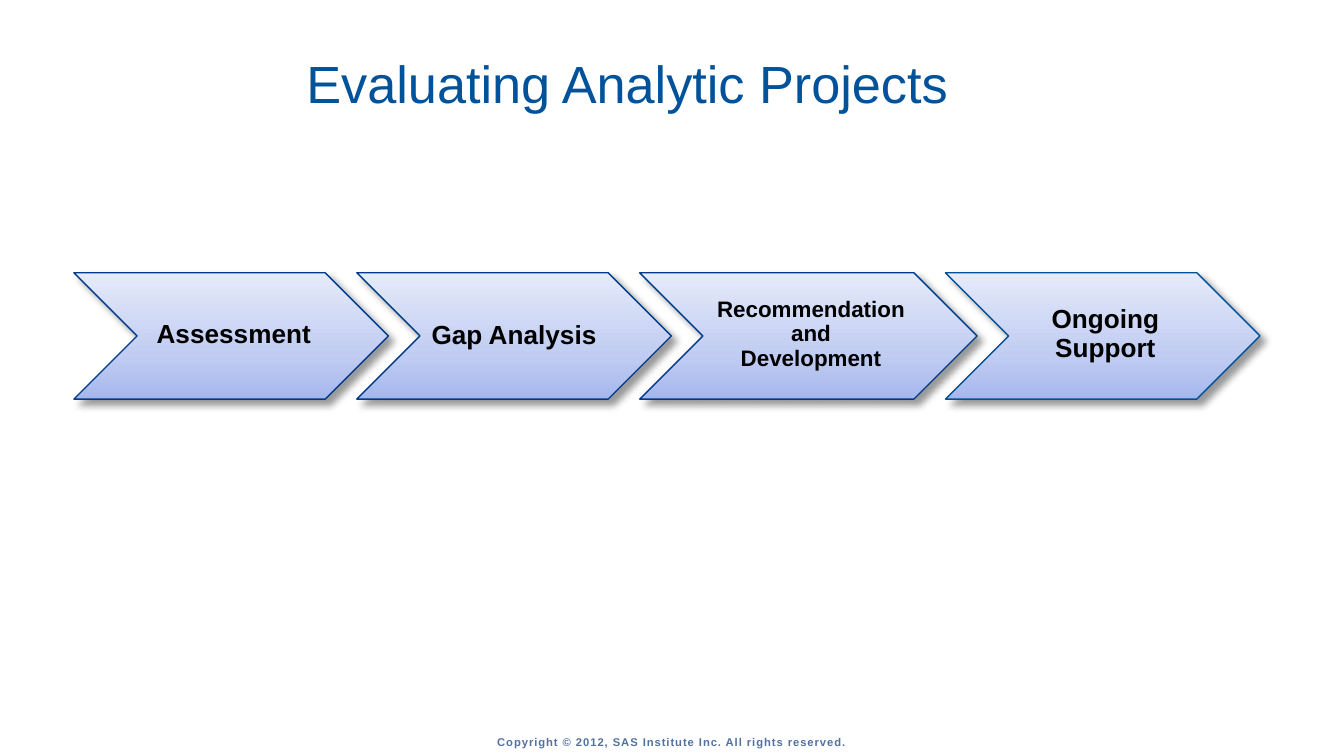
import copy

import pptx
import pptx.dml.color
import pptx.enum.shapes
import pptx.enum.text
import pptx.oxml
import pptx.oxml.ns
import pptx.util

Inches = pptx.util.Inches
Pt = pptx.util.Pt
ALIGN = pptx.enum.text.PP_ALIGN

# Content: label lines, chevron width, type size, line colour, label insets
TITLE = "Evaluating Analytic Projects"
COPYRIGHT = "Copyright © 2012, SAS Institute Inc. All rights reserved."
PLAIN = (0, 0, 0, 0)
INSET = (0.06, 0, 0.02, 0.02)
STEPS = [
    (["Assessment"], 2.34, "step", "line", INSET),
    (["Gap Analysis"], 2.34, "step", "line", PLAIN),
    (["Recommendation", "and", "Development"], 2.51, "long_step", "line", INSET),
    (["Ongoing Support"], 2.34, "step", "last_line", INSET),
]

THEME = {
    "font": "Arial",
    "color": {"title": "00539B", "text": "000000", "footer": "52719E",
              "line": "003A8A", "last_line": "005198"},
    "size": {"title": 28, "step": 14, "long_step": 12, "footer": 6},
    "gradient": [(0, "A5B7ED"), (0.35, "C0CCF1"), (1, "E6EBFA")],
}

LEFT, TOP, HEIGHT = 0.55, 2.03, 0.94
POINT = HEIGHT / 2  # depth of a chevron's notch and tip
OVERLAP = POINT / 2  # each tip reaches halfway into the next notch

SHADOW = (
    f'<a:effectLst {pptx.oxml.ns.nsdecls("a")}>'
    '<a:outerShdw blurRad="50800" dist="50800" dir="2700000" algn="tl" rotWithShape="0">'
    '<a:srgbClr val="000000"><a:alpha val="40000"/></a:srgbClr>'
    '</a:outerShdw></a:effectLst>'
)


def rgb(name):
    return pptx.dml.color.RGBColor.from_string(THEME["color"].get(name, name))


def write(box, lines, size, color, align, bold=False, insets=(0.1, 0.05, 0.1, 0.05)):
    """Fill a box with one paragraph, broken into the given lines."""
    frame = box.text_frame
    frame.word_wrap = True
    frame.auto_size = pptx.enum.text.MSO_AUTO_SIZE.NONE
    frame.vertical_anchor = pptx.enum.text.MSO_ANCHOR.MIDDLE
    (frame.margin_left, frame.margin_top,
     frame.margin_right, frame.margin_bottom) = map(Inches, insets)
    para = frame.paragraphs[0]
    para.alignment = align
    for index, line in enumerate(lines):
        if index:
            para.add_line_break()
        span = para.add_run()
        span.text = line
        span.font.name = THEME["font"]
        span.font.size = Pt(THEME["size"][size])
        span.font.bold = bold
        span.font.color.rgb = rgb(color)
    return para


def add_chevron(group, left, width, line):
    chevron = group.shapes.add_shape(
        pptx.enum.shapes.MSO_SHAPE.CHEVRON,
        Inches(left), Inches(TOP), Inches(width), Inches(HEIGHT))
    chevron.adjustments[0] = 0.5
    chevron.line.color.rgb = rgb(line)
    chevron.line.width = Pt(0.75)

    # Three-stop gradient, palest at the top
    fill = chevron.fill
    fill.gradient()
    fill.gradient_angle = 90
    stops = chevron.element.spPr.find(".//" + pptx.oxml.ns.qn("a:gsLst"))
    stops.append(copy.deepcopy(stops[0]))
    for stop, (position, color) in zip(fill.gradient_stops, THEME["gradient"]):
        stop.position = position
        stop.color.rgb = rgb(color)

    chevron.element.spPr.append(pptx.oxml.parse_xml(SHADOW))


def main():
    # A 16:9 page
    deck = pptx.Presentation()
    deck.slide_width = Inches(10)
    deck.slide_height = deck.slide_width * 9 // 16
    page = deck.slides.add_slide(deck.slide_layouts[5])

    # Title
    title = page.shapes.title
    title.left, title.top = Inches(2.18), Inches(0.53)
    title.width, title.height = Inches(5.38), Inches(0.37)
    para = write(title, [TITLE], "title", "title", ALIGN.LEFT)
    para.line_spacing = Pt(18.8)

    # Chain of chevrons, each label between notch and tip
    chain = page.shapes.add_group_shape()
    left = LEFT
    for lines, width, size, line, insets in STEPS:
        add_chevron(chain, left, width, line)
        label = chain.shapes.add_textbox(
            Inches(left + POINT), Inches(TOP),
            Inches(width - 2 * POINT), Inches(HEIGHT))
        para = write(label, lines, size, "text", ALIGN.CENTER, True, insets)
        para.line_spacing = 0.9
        left += width - OVERLAP

    # Copyright line, set low in its box
    footer = page.shapes.add_textbox(
        Inches(3.28), Inches(5.32), Inches(3.43), Inches(0.3))
    para = write(footer, [COPYRIGHT], "footer", "footer", ALIGN.CENTER, True,
                 (0.1, 0.1, 0.1, 0))
    para.runs[0].font._element.set("spc", "50")

    deck.save("out.pptx")


if __name__ == "__main__":
    main()
